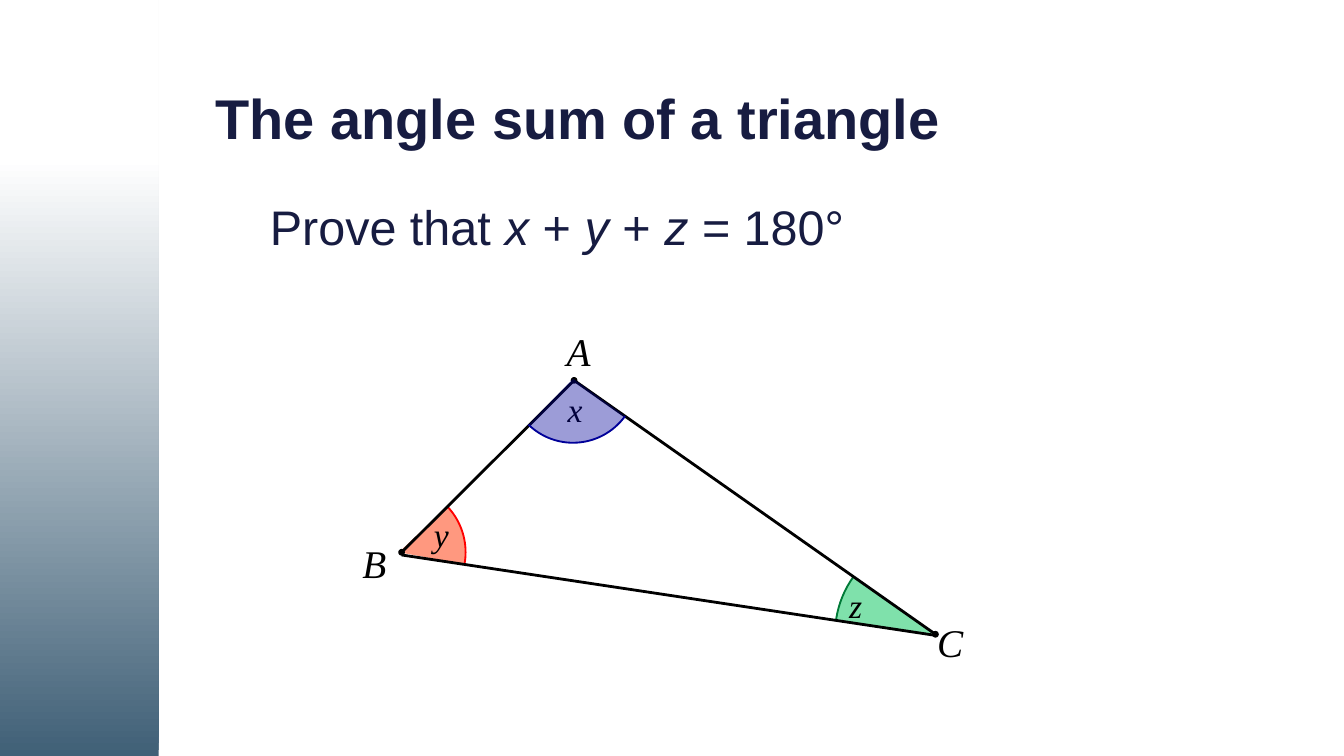
from copy import deepcopy
from math import ceil, cos, floor, radians, sin, tan
from typing import NamedTuple

from lxml.etree import Element, SubElement
from pptx import Presentation
from pptx.dml.color import RGBColor
from pptx.enum.shapes import MSO_CONNECTOR as Link, MSO_SHAPE as Kind
from pptx.enum.text import MSO_ANCHOR as Anchor, MSO_AUTO_SIZE as Fit, PP_ALIGN as Align
from pptx.oxml.ns import qn
from pptx.util import Cm, Pt

NAVY = RGBColor(0x17, 0x1C, 0x41)
STEEL = RGBColor(0x40, 0x60, 0x77)
WHITE = RGBColor(0xFF, 0xFF, 0xFF)
BLACK = RGBColor(0, 0, 0)
RED = RGBColor(0xFF, 0, 0)
CORAL = RGBColor(0xFF, 0x33, 0)
GREEN = RGBColor(0, 0x7A, 0x37)
MINT = RGBColor(0, 0xC4, 0x59)
BLUE = RGBColor(0, 0, 0x99)


class Point(NamedTuple):
    x: float
    y: float


class Wedge(NamedTuple):
    mid: Point
    size: float
    start: float
    end: float
    fill: RGBColor
    line: RGBColor
    alpha: int


class Label(NamedTuple):
    text: str
    x: float
    y: float
    wide: float
    high: float
    size: int
    tight: bool


A, B, C = Point(10.85, 7.19), Point(7.59, 10.44), Point(17.68, 11.99)
SIDES = [(A, B), (A, C), (Point(7.59, 10.49), Point(17.68, 12.01))]
ANGLE_X = Wedge(Point(10.83, 7.16), 1.21, 35.7, 134.1, BLUE, BLUE, 39)
ANGLE_Y = Wedge(Point(7.54, 10.44), 1.26, -43.4, 10.4, CORAL, RED, 50)
ANGLE_Z = Wedge(Point(17.65, 11.99), 1.87, 188.6, 215.6, MINT, GREEN, 50)
LABELS = [
    Label("A", 10.71, 6.18, 0.46, 0.89, 21, True),
    Label("B", 6.85, 10.19, 0.46, 0.89, 21, True),
    Label("C", 17.71, 11.68, 0.51, 0.89, 21, True),
    Label("x", 10.48, 7.22, 1.35, 1.02, 18, False),
    Label("y", 7.95, 9.59, 1.35, 1.02, 18, False),
    Label("z", 15.8, 10.93, 1.35, 1.02, 18, False),
]


def set_all(item, **values) -> None:
    for name, value in values.items():
        setattr(item, name, value)


def draw_panel(shapes) -> None:
    panel = shapes.add_shape(Kind.RECTANGLE, 0, 0, Cm(3), Cm(14.29))
    panel.shadow.inherit = False
    panel.line.fill.background()
    panel.fill.gradient()
    panel.fill.gradient_angle = 90
    for stop, place, color in zip(panel.fill.gradient_stops, (0, 0.79), (STEEL, WHITE)):
        stop.position = place
        stop.color.rgb = color


def on_arc(wedge: Wedge, angle: float, bend: float = 0) -> tuple:
    """Give the point at an angle, moved along the tangent by bend radii."""
    turn = radians(angle)
    return (Cm(wedge.mid.x + wedge.size * (cos(turn) - bend * sin(turn))),
            Cm(wedge.mid.y + wedge.size * (sin(turn) + bend * cos(turn))))


def draw_wedge(shapes, wedge: Wedge) -> None:
    """Draw a translucent sector with a line along its arc only."""
    quarters = range(ceil(wedge.start / 90), floor(wedge.end / 90) + 1)
    angles = [wedge.start, *(90 * i for i in quarters), wedge.end]
    pen = shapes.build_freeform(*on_arc(wedge, wedge.start))
    nodes = [on_arc(wedge, angle) for angle in angles[1:]]
    pen.add_line_segments(nodes + [(Cm(wedge.mid.x), Cm(wedge.mid.y))], close=True)
    shape = pen.convert_to_shape()
    shape.shadow.inherit = False
    shape.fill.solid()
    shape.fill.fore_color.rgb = wedge.fill
    tint = shape.fill._xPr.find(".//" + qn("a:srgbClr"))
    SubElement(tint, qn("a:alpha"), val=str(wedge.alpha * 1000))
    shape.line.color.rgb = wedge.line
    shape.line.width = Pt(1)

    sector = shape._element.find(".//" + qn("a:path"))
    for i, (start, end) in enumerate(zip(angles, angles[1:]), 1):
        bend = 4 / 3 * tan(radians(end - start) / 4)
        curve = Element(qn("a:cubicBezTo"))
        for x, y in (on_arc(wedge, start, bend), on_arc(wedge, end, -bend),
                     on_arc(wedge, end)):
            SubElement(curve, qn("a:pt"), x=str(x - shape.left), y=str(y - shape.top))
        sector[i] = curve
    edge = deepcopy(sector)
    for part in edge[len(angles):]:
        edge.remove(part)
    edge.set("fill", "none")
    sector.set("stroke", "0")
    sector.addprevious(edge)


def draw_side(shapes, start: Point, end: Point) -> None:
    side = shapes.add_connector(Link.STRAIGHT, *map(Cm, start + end))
    side.line.color.rgb = BLACK
    side.line.width = Pt(1.5)
    SubElement(side._element.spPr, qn("a:effectLst"))


def draw_dot(shapes, mid: Point) -> None:
    dot = shapes.add_shape(Kind.OVAL, Cm(mid.x - 0.05), Cm(mid.y - 0.05), Cm(0.1), Cm(0.1))
    dot.shadow.inherit = False
    dot.fill.solid()
    dot.fill.fore_color.rgb = BLACK
    dot.line.color.rgb = BLACK
    dot.line.width = 0


def draw_label(shapes, label: Label) -> None:
    box = shapes.add_textbox(*map(Cm, label[1:5]))
    frame = box.text_frame
    set_all(frame, word_wrap=not label.tight, auto_size=Fit.SHAPE_TO_FIT_TEXT)
    para = frame.paragraphs[0]
    if label.tight:
        set_all(frame, margin_left=0, margin_top=0, margin_right=0, margin_bottom=0)
        para.space_after = Pt(7.5)
    run = para.add_run()
    run.text = label.text
    set_all(run.font, name="Times New Roman", size=Pt(label.size), italic=True)
    run.font.color.rgb = BLACK


def fill_holder(holder, place: tuple, parts: list, size: int, bold: bool, anchor):
    """Move a placeholder and write its runs; each part is a text and its italic flag."""
    left, top, wide, high = map(Cm, place)
    set_all(holder, left=left, top=top, width=wide, height=high)
    frame = holder.text_frame
    set_all(frame, word_wrap=True, auto_size=Fit.NONE, vertical_anchor=anchor)
    para = frame.paragraphs[0]
    props = para._p.get_or_add_pPr()
    props.set("marL", "0")
    props.set("indent", "0")
    SubElement(props, qn("a:buNone"))
    set_all(para, alignment=Align.LEFT, line_spacing=0.9, space_before=Pt(0))
    for text, slant in parts:
        run = para.add_run()
        run.text = text
        set_all(run.font, name="Arial", size=Pt(size), bold=bold, italic=slant)
        run.font.color.rgb = NAVY
    return frame


def main() -> None:
    deck = Presentation()
    set_all(deck, slide_width=Cm(25.4), slide_height=Cm(14.29))
    slide = deck.slides.add_slide(deck.slide_layouts[1])
    shapes = slide.shapes
    draw_panel(shapes)
    fill_holder(shapes.title, (3.82, 0.99, 15.95, 2.62),
                [("The angle sum of a triangle", False)], 30, True, Anchor.MIDDLE)
    claim = [("Prove that ", False), ("x", True), (" + ", False), ("y", True),
             (" + ", False), ("z", True), (" = 180°", False)]
    frame = fill_holder(slide.placeholders[1], (4.91, 3.75, 16.79, 2.51),
                        claim, 26, False, Anchor.TOP)
    set_all(frame, margin_left=Cm(0.19), margin_right=Cm(0.19),
            margin_top=Cm(0.09), margin_bottom=Cm(0.09))

    for wedge in (ANGLE_Y, ANGLE_Z):
        draw_wedge(shapes, wedge)
    for start, end in SIDES:
        draw_side(shapes, start, end)
    for mid in (A, B, C):
        draw_dot(shapes, mid)
    for label in LABELS:
        draw_label(shapes, label)
    draw_wedge(shapes, ANGLE_X)
    deck.save("out.pptx")


if __name__ == "__main__":
    main()
